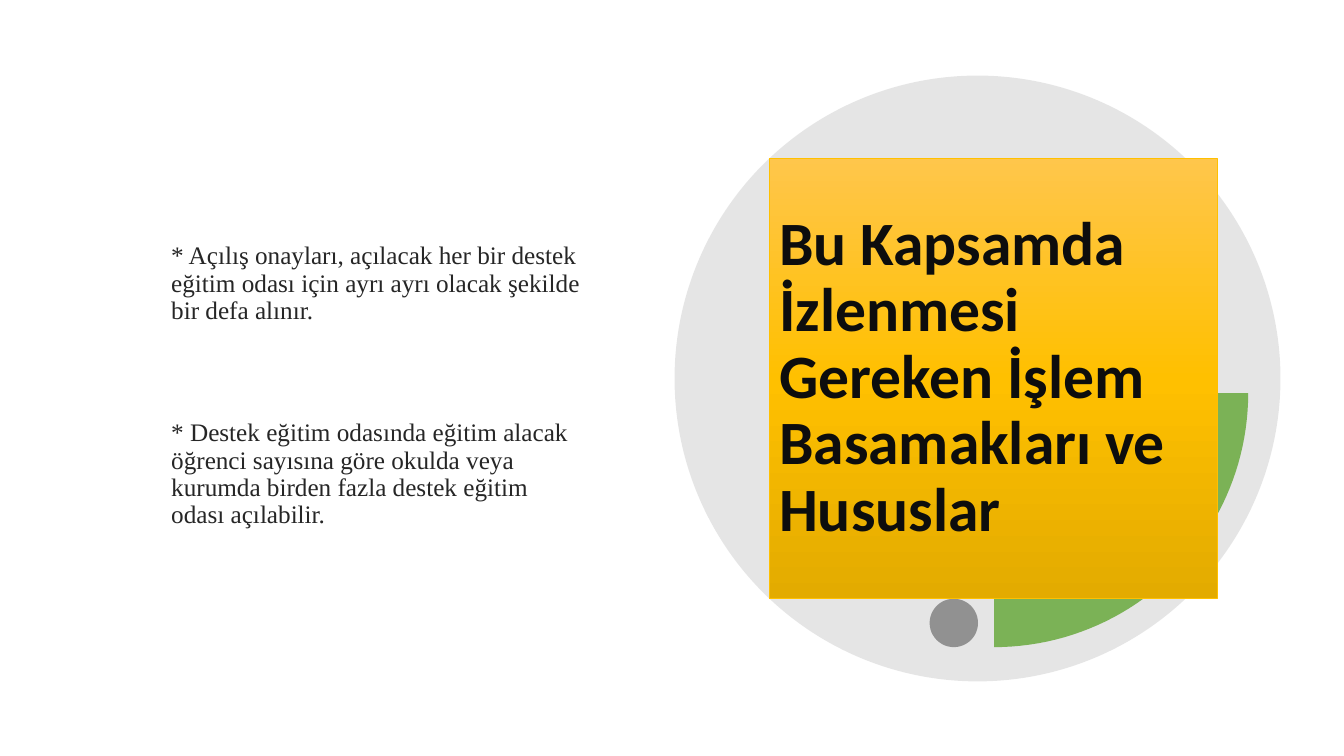
import math
from dataclasses import dataclass

import pptx
import pptx.dml.color
import pptx.enum.shapes
import pptx.enum.text
import pptx.oxml
import pptx.oxml.ns
import pptx.util

Inches = pptx.util.Inches
Pt = pptx.util.Pt
SHAPES = pptx.enum.shapes.MSO_SHAPE
MIDDLE = pptx.enum.text.MSO_ANCHOR.MIDDLE
LEFT = pptx.enum.text.PP_ALIGN.LEFT


@dataclass(frozen=True)
class Theme:
    disc: str = "808080"
    dot: str = "595959"
    arc: str = "70AD47"
    panel: tuple = ((0, "FFC64B"), (50, "FFC000"), (100, "E3AB00"))
    panel_line: str = "FFC000"
    heading: str = "0D0D0D"
    body: str = "262626"
    heading_font: str = "Calibri"
    body_font: str = "Times New Roman"
    heading_size: int = 44
    body_size: int = 18
    line_spacing: float = 0.9


THEME = Theme()
HEADING = "Bu Kapsamda İzlenmesi Gereken İşlem Basamakları ve Hususlar"
RULES = (
    "* Açılış onayları, açılacak her bir destek eğitim odası için ayrı ayrı olacak şekilde bir defa alınır.",
    "* Destek eğitim odasında eğitim alacak öğrenci sayısına göre okulda veya kurumda birden fazla destek eğitim odası açılabilir.",
)


def rgb(color):
    return pptx.dml.color.RGBColor.from_string(color)


def paint(figure, color, opacity):
    figure.shadow.inherit = False
    figure.line.fill.background()
    figure.fill.solid()
    figure.fill.fore_color.rgb = rgb(color)
    tint = figure.fill._xPr.find(".//" + pptx.oxml.ns.qn("a:srgbClr"))
    tint.append(pptx.oxml.parse_xml(
        f'<a:alpha {pptx.oxml.ns.nsdecls("a")} val="{opacity * 1000}"/>'))


def add_circle(slide, left, top, diameter, color, opacity):
    circle = slide.shapes.add_shape(
        SHAPES.OVAL, Inches(left), Inches(top), Inches(diameter), Inches(diameter))
    paint(circle, color, opacity)


def add_quarter_ring(slide, center_x, center_y, outer, inner, color, opacity):
    def arc(radius, degrees):
        return [(Inches(center_x + radius * math.cos(math.radians(d))),
                 Inches(center_y + radius * math.sin(math.radians(d)))) for d in degrees]

    outline = arc(outer, range(0, 91, 2)) + arc(inner, range(90, -1, -2))
    builder = slide.shapes.build_freeform(*outline[0], scale=1.0)
    builder.add_line_segments(outline[1:], close=True)
    paint(builder.convert_to_shape(), color, opacity)


def write(frame, texts, font, size, color, bold=False, gap=0):
    frame.word_wrap = True
    frame.vertical_anchor = MIDDLE
    frame.text = "\n".join(texts)
    for paragraph in frame.paragraphs:
        paragraph.alignment = LEFT
        paragraph.line_spacing = THEME.line_spacing
        for run in paragraph.runs:
            run.font.name = font
            run.font.size = Pt(size)
            run.font.bold = bold
            run.font.color.rgb = rgb(color)
    for paragraph in frame.paragraphs[:-1]:
        paragraph.space_after = Pt(gap)


def add_heading_panel(slide, left, top, width, height):
    panel = slide.shapes.add_shape(
        SHAPES.RECTANGLE, Inches(left), Inches(top), Inches(width), Inches(height))
    panel.shadow.inherit = False
    panel.line.color.rgb = rgb(THEME.panel_line)
    panel.line.width = Pt(0.5)
    stops = "".join(f'<a:gs pos="{position * 1000}"><a:srgbClr val="{color}"/></a:gs>'
                    for position, color in THEME.panel)
    gradient = pptx.oxml.parse_xml(
        f'<a:gradFill {pptx.oxml.ns.nsdecls("a")} rotWithShape="1"><a:gsLst>{stops}</a:gsLst>'
        '<a:lin ang="5400000" scaled="0"/></a:gradFill>')
    panel._element.spPr.find(pptx.oxml.ns.qn("a:prstGeom")).addnext(gradient)
    write(panel.text_frame, [HEADING], THEME.heading_font, THEME.heading_size,
          THEME.heading, bold=True)


def add_rules(slide, left, top, width, height):
    rules = slide.shapes.add_textbox(Inches(left), Inches(top), Inches(width), Inches(height))
    rules.text_frame.margin_top = Inches(0.2)
    write(rules.text_frame, RULES, THEME.body_font, THEME.body_size, THEME.body, gap=68)


def main():
    deck = pptx.Presentation()
    deck.slide_width = Inches(13.33)
    deck.slide_height = Inches(7.5)
    slide = deck.slides.add_slide(deck.slide_layouts[6])
    add_circle(slide, 6.69, 0.75, 6.01, THEME.disc, 20)
    add_circle(slide, 9.22, 5.94, 0.48, THEME.dot, 60)
    add_quarter_ring(slide, 9.86, 3.9, 2.52, 2, THEME.arc, 90)
    add_heading_panel(slide, 7.63, 1.57, 4.44, 4.37)
    add_rules(slide, 1.6, 1.57, 4.3, 4.37)
    deck.save("out.pptx")


if __name__ == "__main__":
    main()
